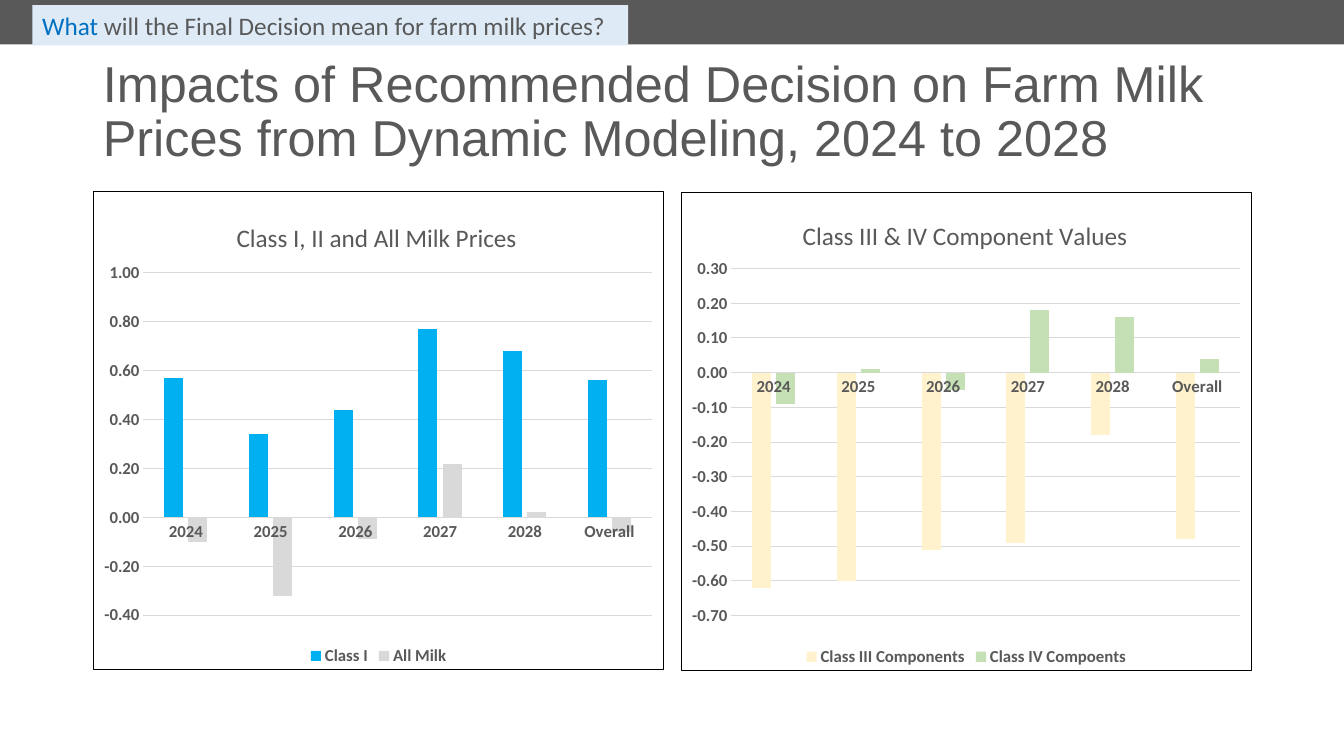
import pptx
import pptx.chart.data
import pptx.dml.color
import pptx.enum.chart
import pptx.enum.shapes
import pptx.enum.text
import pptx.oxml
import pptx.oxml.ns
import pptx.util

Inches = pptx.util.Inches
Pt = pptx.util.Pt
qn = pptx.oxml.ns.qn

COLORS = {
    "text": "595959", "band": "595959", "tag": "DEEBF7", "accent": "0070C0",
    "grid": "D9D9D9", "class_1": "00B0F0", "all_milk": "D9D9D9",
    "class_3": "FFF2CC", "class_4": "C5E0B4", "border": "000000",
}
YEARS = ["2024", "2025", "2026", "2027", "2028", "Overall"]

# Positions inside a chart are fractions of its box
PRICES = {
    "title": "Class I, II and All Milk Prices", "title_at": (0.243, 0.052),
    "plot_at": (0.088, 0.171, 0.891, 0.715), "scale": (-0.4, 1.0, 0.2),
    "series": [
        ("Class I", "class_1", [0.57, 0.34, 0.44, 0.77, 0.68, 0.56]),
        ("All Milk", "all_milk", [-0.1, -0.32, -0.09, 0.22, 0.02, -0.06]),
    ],
}
COMPONENTS = {
    "title": "Class III & IV Component Values", "title_at": (0.205, 0.046),
    "plot_at": (0.088, 0.16, 0.891, 0.725), "scale": (-0.7, 0.3, 0.1),
    "series": [
        ("Class III Components", "class_3", [-0.62, -0.6, -0.51, -0.49, -0.18, -0.48]),
        ("Class IV Compoents", "class_4", [-0.09, 0.01, -0.05, 0.18, 0.16, 0.04]),
    ],
}


def rgb(name):
    return pptx.dml.color.RGBColor.from_string(COLORS[name])


def style_font(font, size, color="text", name="Calibri", bold=False):
    font.size, font.name, font.bold = Pt(size), name, bold
    font.color.rgb = rgb(color)


def add_run(paragraph, text, **style):
    run = paragraph.add_run()
    run.text = text
    style_font(run.font, **style)


def add_block(slide, box, color):
    block = slide.shapes.add_shape(
        pptx.enum.shapes.MSO_SHAPE.RECTANGLE, *map(Inches, box))
    block.shadow.inherit = False
    block.fill.solid()
    block.fill.fore_color.rgb = rgb(color)
    block.line.fill.background()
    return block


def add_heading(slide, box):
    heading = slide.shapes.title
    heading.left, heading.top, heading.width, heading.height = map(Inches, box)
    frame = heading.text_frame
    frame.word_wrap = True
    frame.auto_size = pptx.enum.text.MSO_AUTO_SIZE.NONE
    frame.vertical_anchor = pptx.enum.text.MSO_ANCHOR.MIDDLE
    line = frame.paragraphs[0]
    line.alignment = pptx.enum.text.PP_ALIGN.LEFT
    line.line_spacing = 0.9
    add_run(line, "Impacts of Recommended Decision on Farm Milk Prices "
            "from Dynamic Modeling, 2024 to 2028", size=36, name="Arial")


def add_question_tag(slide, box):
    frame = add_block(slide, box, "tag").text_frame
    frame.word_wrap = False
    frame.vertical_anchor = pptx.enum.text.MSO_ANCHOR.MIDDLE
    question = frame.paragraphs[0]
    question.alignment = pptx.enum.text.PP_ALIGN.LEFT
    add_run(question, "What ", size=18, color="accent")
    add_run(question, "will the Final Decision mean for farm milk prices?", size=18)


def set_layout(parent, index, place, inner=False):
    """Fix the place of a chart title or plot area."""
    old = parent.find(qn("c:layout"))
    if old is not None:
        parent.remove(old)
    target = '<c:layoutTarget val="inner"/>' if inner else ""
    modes = '<c:xMode val="edge"/><c:yMode val="edge"/>'
    values = "".join(f'<c:{key} val="{v}"/>' for key, v in zip("xywh", place))
    parent.insert(index, pptx.oxml.parse_xml(
        f'<c:layout {pptx.oxml.ns.nsdecls("c")}><c:manualLayout>'
        f"{target}{modes}{values}</c:manualLayout></c:layout>"))


def add_border(chart):
    chart._chartSpace.find(qn("c:chart")).addnext(pptx.oxml.parse_xml(
        f'<c:spPr {pptx.oxml.ns.nsdecls("c", "a")}><a:noFill/><a:ln w="9525">'
        f'<a:solidFill><a:srgbClr val="{COLORS["border"]}"/></a:solidFill>'
        "</a:ln></c:spPr>"))


def add_price_chart(slide, box, content):
    data = pptx.chart.data.CategoryChartData(number_format="#,##0.00")
    data.categories = YEARS
    for name, _, values in content["series"]:
        data.add_series(name, values)
    chart = slide.shapes.add_chart(
        pptx.enum.chart.XL_CHART_TYPE.COLUMN_CLUSTERED, *map(Inches, box), data).chart
    style_font(chart.font, 10, "border")
    add_border(chart)

    # Title and plot area
    chart.has_title = True
    add_run(chart.chart_title.text_frame.paragraphs[0], content["title"], size=18)
    chart.chart_title.include_in_layout = False
    set_layout(chart.chart_title._element, 1, content["title_at"])
    set_layout(chart._chartSpace.chart.plotArea, 0, content["plot_at"], inner=True)

    # Columns
    plot = chart.plots[0]
    plot.gap_width, plot.overlap, plot.vary_by_categories = 219, -27, False
    for series, (_, color, _) in zip(plot.series, content["series"]):
        series.invert_if_negative = False
        series.format.fill.solid()
        series.format.fill.fore_color.rgb = rgb(color)

    # Axes
    prices, years = chart.value_axis, chart.category_axis
    for axis in (prices, years):
        axis.major_tick_mark = pptx.enum.chart.XL_TICK_MARK.NONE
        axis.minor_tick_mark = pptx.enum.chart.XL_TICK_MARK.NONE
        style_font(axis.tick_labels.font, 12, bold=True)
    prices.minimum_scale, prices.maximum_scale, prices.major_unit = content["scale"]
    prices.tick_labels.number_format = "#,##0.00"
    prices.tick_labels.number_format_is_linked = False
    prices.format.line.fill.background()
    prices.has_major_gridlines = True
    for line in (prices.major_gridlines.format.line, years.format.line):
        line.width = Pt(0.75)
        line.color.rgb = rgb("grid")

    # Legend
    chart.has_legend = True
    chart.legend.position = pptx.enum.chart.XL_LEGEND_POSITION.BOTTOM
    chart.legend.include_in_layout = False
    style_font(chart.legend.font, 12, bold=True)


def main():
    deck = pptx.Presentation()
    deck.slide_width, deck.slide_height = Inches(13.33), Inches(7.5)
    slide = deck.slides.add_slide(deck.slide_layouts[5])
    add_block(slide, (0, 0, 13.33, 0.44), "band")
    add_heading(slide, (0.92, 0.4, 11.5, 1.45))
    add_price_chart(slide, (0.92, 1.89, 5.67, 4.76), PRICES)
    add_price_chart(slide, (6.75, 1.9, 5.67, 4.76), COMPONENTS)
    add_question_tag(slide, (0.32, 0.05, 5.91, 0.4))
    deck.save("out.pptx")


if __name__ == "__main__":
    main()
